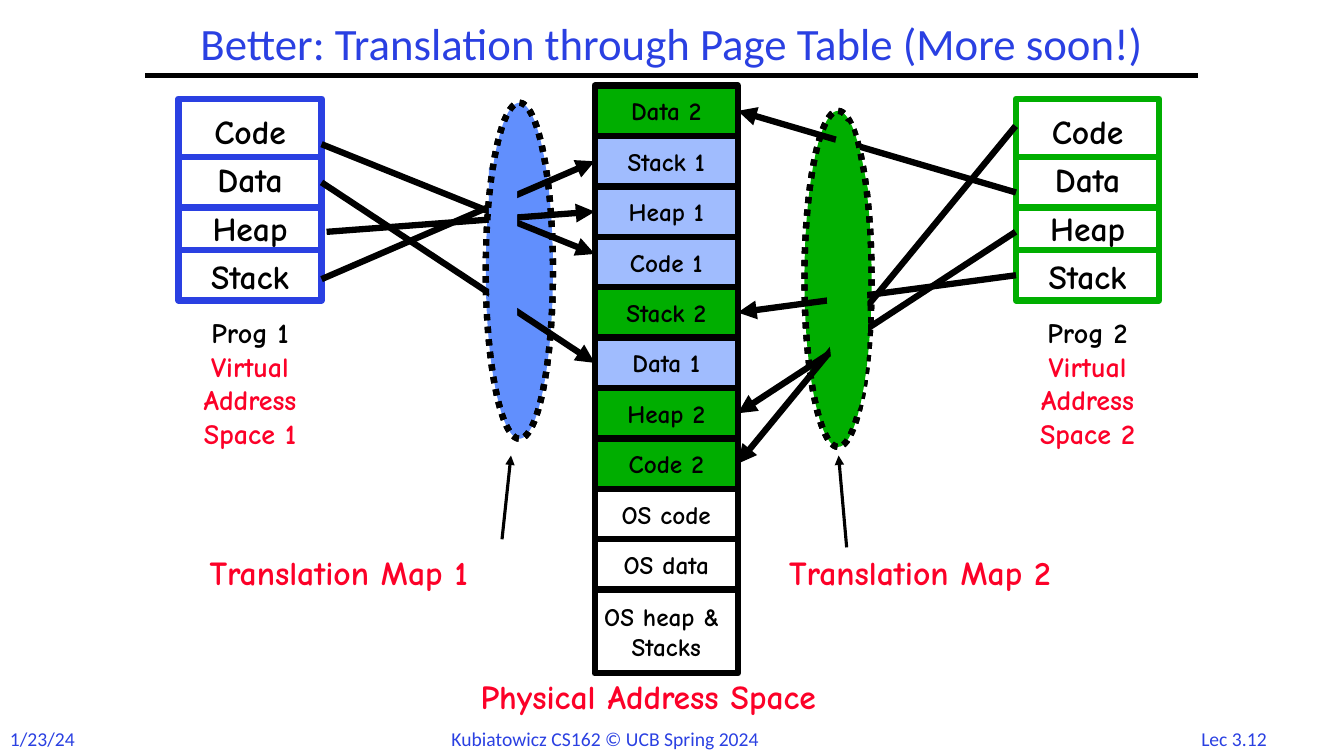
import pptx
import pptx.util
import pptx.dml.color
import pptx.enum.dml
import pptx.enum.shapes
import pptx.enum.text
import pptx.oxml
import pptx.oxml.ns

Pt = pptx.util.Pt
RGB = pptx.dml.color.RGBColor
KIND = pptx.enum.shapes.MSO_SHAPE
ALIGN = pptx.enum.text.PP_ALIGN
MIDDLE = pptx.enum.text.MSO_ANCHOR.MIDDLE

BLUE = RGB(0x2A, 0x40, 0xE2)
GREEN = RGB(0x00, 0xAE, 0x00)
SKY = RGB(0x61, 0x8F, 0xFD)
PALE = RGB(0xA0, 0xBC, 0xFE)
RED = RGB(0xFC, 0x01, 0x28)
BLACK = RGB(0, 0, 0)
WHITE = RGB(255, 255, 255)
COMIC, PLAIN = "Comic Neue", "Calibri"

TITLE = "Better: Translation through Page Table (More soon!)"
PARTS = ["Code", "Data", "Heap", "Stack"]
# number, left of box, line colour
PROGS = [(1, 127.5, BLUE), (2, 725.75, GREEN)]
RULES = [112.3, 148.3, 178.6]
CELLS = [("Data 2", GREEN), ("Stack 1", PALE), ("Heap 1", PALE),
         ("Code 1", PALE), ("Stack 2", GREEN), ("Data 1", PALE),
         ("Heap 2", GREEN), ("Code 2", GREEN), ("OS code", WHITE),
         ("OS data", WHITE), ("OS heap & \nStacks", WHITE)]
# start x, start y, target cell
ARROWS = [(229.7, 103, "Code 1"), (229.7, 130.3, "Data 1"),
          (233.3, 165.6, "Heap 1"), (229.7, 199.4, "Stack 1"),
          (725.4, 90, "Code 2"), (725.75, 137.5, "Data 2"),
          (725.4, 165.6, "Heap 2"), (725.75, 196.6, "Stack 2")]
MAPS = [((347, 73.4, 48, 240), SKY), ((574.6, 79.2, 48, 240), GREEN)]
LABELS = [("Translation Map 1", (142.6, 391, 226.8, 36)),
          ("Translation Map 2", (556.6, 391, 226.8, 36)),
          ("Physical Address Space", (336.2, 479.5, 293.8, 36.7))]
POINTERS = [(358.6, 385.2, 365, 325.4), (604.8, 391, 599, 325.4)]
FOOTERS = [("1/23/24", (0, 515.5, 61.2, 24.5)),
           ("Kubiatowicz CS162 © UCB Spring 2024", (315.4, 515.5, 265, 24.5)),
           ("Lec 3.12", (851, 515.5, 69.8, 24.5))]
BOX_W, BOX_TOP, BOX_H = 102.2, 70.6, 144
CELL_X, CELL_TOP, CELL_H, LAST_H = 424.8, 61.2, 36, 59.8
THICK = 4.5

deck = pptx.Presentation()
deck.slide_width, deck.slide_height = Pt(960), Pt(540)
slide = deck.slides.add_slide(deck.slide_layouts[5])
shapes = slide.shapes


def write(shape, lines, size, font=COMIC, bold=True, align=ALIGN.CENTER,
          gap=None):
    """Fill a shape with (text, colour) lines."""
    frame = shape.text_frame
    frame.word_wrap = False
    for i, (text, color) in enumerate(lines):
        para = frame.add_paragraph() if i else frame.paragraphs[0]
        para.alignment = align
        if gap:
            para.line_spacing = gap
        run = para.add_run()
        run.text = text
        run.font.name, run.font.size, run.font.bold = font, Pt(size), bold
        run.font.color.rgb = color


def label(area, lines, size, **style):
    write(shapes.add_textbox(*map(Pt, area)), lines, size, **style)


def draw(kind, area, fill=None, line=None, dots=False):
    shape = shapes.add_shape(kind, *map(Pt, area))
    shape.shadow.inherit = False
    if fill is None:
        shape.fill.background()
    else:
        shape.fill.solid()
        shape.fill.fore_color.rgb = fill
    if line is None:
        shape.line.fill.background()
    else:
        shape.line.color.rgb = line
        shape.line.width = Pt(THICK)
        if dots:
            shape.line.dash_style = pptx.enum.dml.MSO_LINE.ROUND_DOT
    shape.text_frame.vertical_anchor = MIDDLE
    return shape


def link(ends, color=BLACK, width=THICK, head=False):
    """Draw a straight line, with an arrowhead at its end if asked."""
    line = shapes.add_connector(pptx.enum.shapes.MSO_CONNECTOR.STRAIGHT,
                                *map(Pt, ends))
    line.line.color.rgb = color
    line.line.width = Pt(width)
    props = line.element.spPr
    make = pptx.oxml.ns.qn
    if head:
        tip = props.find(make("a:ln")).makeelement(
            make("a:tailEnd"), {"type": "triangle"})
        props.find(make("a:ln")).append(tip)
    props.append(props.makeelement(make("a:effectLst"), {}))
    return line


# Title, rule and footers
title = shapes.title
title.left, title.top, title.width, title.height = map(
    Pt, (96, 12.2, 768, 41.8))
write(title, [(TITLE, BLUE)], 32, font=PLAIN, bold=False, gap=0.9)
title.text_frame.word_wrap = True
title.text_frame.vertical_anchor = MIDDLE
link((103.7, 54, 856, 54), width=3)
for text, area in FOOTERS:
    label(area, [(text, BLUE)], 14, font=PLAIN, bold=False, align=ALIGN.LEFT)

# Translation maps
for area, color in MAPS:
    draw(KIND.OVAL, area, color, BLACK, dots=True)

# Virtual address spaces
for num, left, color in PROGS:
    names = [(f"Prog {num}", BLACK), ("Virtual", RED), ("Address", RED),
             (f"Space {num}", RED)]
    label((left + 3.6, 221.8, 95, 104.4), names, 20)
    box = draw(KIND.RECTANGLE, (left, BOX_TOP, BOX_W, BOX_H), WHITE, color)
    write(box, [(part, BLACK) for part in PARTS], 24, gap=1.2)
    for y in RULES:
        link((left, y, left + BOX_W, y), color)

# Physical memory
cells = {}
for i, (text, color) in enumerate(CELLS):
    high = LAST_H if i == len(CELLS) - 1 else CELL_H
    cell = draw(KIND.RECTANGLE, (CELL_X, CELL_TOP + i * CELL_H, BOX_W, high),
                color, BLACK)
    write(cell, [(row, BLACK) for row in text.split("\n")], 18)
    cells[text] = cell, CELL_TOP + (i + 0.5) * CELL_H

for x, y, name in ARROWS:
    cell, mid = cells[name]
    side, end = (1, CELL_X) if x < CELL_X else (3, CELL_X + BOX_W)
    if name == "Code 1":
        link((x, y, end, mid - 5.8), head=True)
    else:
        link((x, y, end, mid), head=True).end_connect(cell, side)

# Map bodies hide the middle of the arrows
draw(KIND.RECTANGLE, (349.2, 120.2, 20.2, 108), SKY)
draw(KIND.OVAL, MAPS[0][0], line=BLACK, dots=True)
patch = draw(KIND.RECTANGLE, (604.8, 103, 12.2, 36), GREEN)
patch.rotation = 348.5
draw(KIND.OVAL, MAPS[1][0], line=BLACK, dots=True)

for text, area in LABELS:
    label(area, [(text, RED)], 24, align=ALIGN.LEFT)
for ends in POINTERS:
    link(ends, width=2.25, head=True)
draw(KIND.OVAL, (590.4, 86.4, 26.6, 203.8), GREEN)
draw(KIND.OVAL, (596.9, 165.6, 23, 131.8), GREEN)

deck.save("out.pptx")
